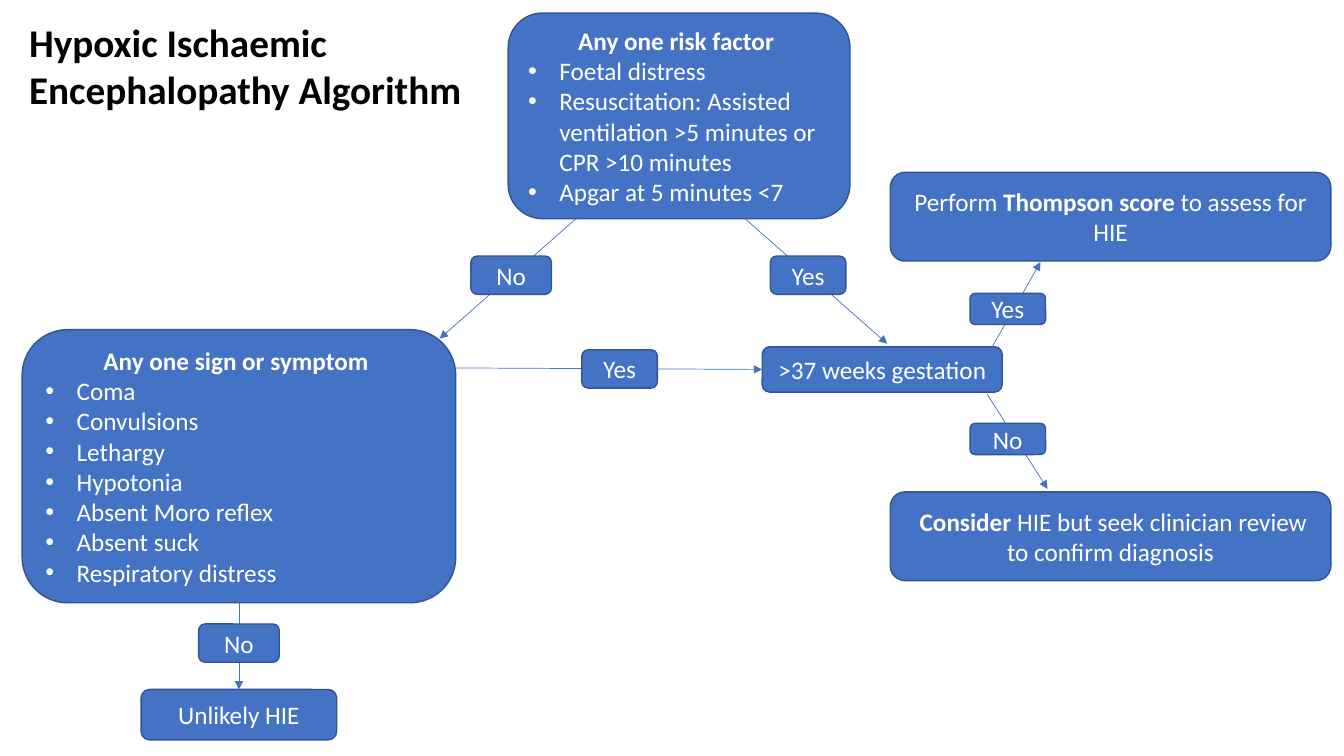
from dataclasses import dataclass

from lxml.etree import SubElement
from pptx import Presentation
from pptx.dml.color import RGBColor
from pptx.enum.shapes import MSO_CONNECTOR, MSO_SHAPE
from pptx.enum.text import MSO_ANCHOR, PP_ALIGN
from pptx.oxml.ns import qn
from pptx.util import Inches, Pt


@dataclass(frozen=True)
class Theme:
    fill: RGBColor = RGBColor(0x44, 0x72, 0xC4)
    outline: RGBColor = RGBColor(0x32, 0x54, 0x91)
    light: RGBColor = RGBColor(0xFF, 0xFF, 0xFF)
    dark: RGBColor = RGBColor(0, 0, 0)
    font: str = "Calibri"
    bullet_font: str = "Arial"
    title: int = 28
    body: int = 18
    outline_width: float = 1
    arrow_width: float = 0.5
    indent: float = 0.31


THEME = Theme()

TITLE = "Hypoxic Ischaemic Encephalopathy Algorithm"
TITLE_AT = (0.19, 0.13, 5.51, 1.04)

# Boxes: name -> (left, top, width, height), heading runs (text, bold), bullets
BOXES = {
    "risk": ((5.04, 0.13, 3.39, 2.04), [("Any one risk factor ", True)],
             ["Foetal distress",
              "Resuscitation: Assisted ventilation >5 minutes or CPR >10 minutes",
              "Apgar at 5 minutes <7"]),
    "signs": ((0.22, 3.27, 4.3, 2.71), [("Any one sign or symptom ", True)],
              ["Coma", "Convulsions", "Lethargy", "Hypotonia",
               "Absent Moro reflex", "Absent suck", "Respiratory distress"]),
    "thompson": ((8.83, 1.71, 4.37, 0.88),
                 [("Perform ", False), ("Thompson score ", True),
                  ("to assess for HIE", False)], []),
    "gestation": ((7.56, 3.44, 2.38, 0.45), [(">37 weeks gestation", False)], []),
    "consider": ((8.83, 4.88, 4.37, 0.88),
                 [(" Consider ", True),
                  ("HIE but seek clinician review to confirm diagnosis", False)], []),
    "unlikely": ((1.4, 6.84, 1.94, 0.5), [("Unlikely HIE", False)], []),
}

# Arrows: start, end, joined start (box, side), joined end (box, side)
ARROWS = [
    ((5.77, 2.12), (4.36, 3.36), None, None),
    ((7.39, 2.17), (8.8, 3.41), None, None),
    ((2.37, 5.98), (2.37, 6.84), ("signs", 2), ("unlikely", 0)),
    ((4.49, 3.65), (7.56, 3.67), None, ("gestation", 1)),
    ((9.79, 3.53), (10.32, 2.6), None, None),
    ((9.79, 3.91), (10.39, 4.85), None, None),
]

# Answers lying on the arrows
ANSWERS = [
    ("No", (4.67, 2.54, 0.8, 0.38)),
    ("Yes", (7.64, 2.54, 0.75, 0.38)),
    ("Yes", (5.77, 3.47, 0.75, 0.38)),
    ("Yes", (9.62, 2.91, 0.75, 0.31)),
    ("No", (9.62, 4.2, 0.75, 0.31)),
    ("No", (1.97, 6.19, 0.8, 0.38)),
]


def add_run(p, text, size, color, bold=False):
    r = p.add_run()
    r.text = text
    r.font.name = THEME.font
    r.font.size = Pt(size)
    r.font.bold = bold
    r.font.color.rgb = color


def set_bullet(p):
    pPr = p._p.get_or_add_pPr()
    pPr.set("marL", str(Inches(THEME.indent)))
    pPr.set("indent", str(-Inches(THEME.indent)))
    SubElement(pPr, qn("a:buFont"), typeface=THEME.bullet_font)
    SubElement(pPr, qn("a:buChar"), char="•")


def add_box(slide, at, heading, bullets=()):
    s = slide.shapes.add_shape(MSO_SHAPE.ROUNDED_RECTANGLE, *map(Inches, at))
    s.shadow.inherit = False
    s.fill.solid()
    s.fill.fore_color.rgb = THEME.fill
    s.line.color.rgb = THEME.outline
    s.line.width = Pt(THEME.outline_width)
    tf = s.text_frame
    tf.word_wrap = True
    tf.vertical_anchor = MSO_ANCHOR.MIDDLE
    p = tf.paragraphs[0]
    p.alignment = PP_ALIGN.CENTER
    for text, bold in heading:
        add_run(p, text, THEME.body, THEME.light, bold)
    for text in bullets:
        p = tf.add_paragraph()
        p.alignment = PP_ALIGN.LEFT
        set_bullet(p)
        add_run(p, text, THEME.body, THEME.light)
    return s


def add_arrow(slide, boxes, start, end, begin_at, end_at):
    c = slide.shapes.add_connector(MSO_CONNECTOR.STRAIGHT, *map(Inches, start + end))
    if begin_at:
        c.begin_connect(boxes[begin_at[0]], begin_at[1])
    if end_at:
        c.end_connect(boxes[end_at[0]], end_at[1])
    c.line.color.rgb = THEME.fill
    c.line.width = Pt(THEME.arrow_width)
    SubElement(c.line._get_or_add_ln(), qn("a:tailEnd"), type="triangle")
    SubElement(c._element.spPr, qn("a:effectLst"))


def add_title(slide):
    tf = slide.shapes.add_textbox(*map(Inches, TITLE_AT)).text_frame
    tf.word_wrap = True
    add_run(tf.paragraphs[0], TITLE, THEME.title, THEME.dark, True)


def main():
    prs = Presentation()
    prs.slide_width, prs.slide_height = Inches(13.33), Inches(7.5)
    slide = prs.slides.add_slide(prs.slide_layouts[6])

    add_title(slide)
    boxes = {name: add_box(slide, *box) for name, box in BOXES.items()}
    for arrow in ARROWS:
        add_arrow(slide, boxes, *arrow)
    # Answers go last so that they cover the arrows
    for text, at in ANSWERS:
        add_box(slide, at, [(text, False)])

    prs.save("out.pptx")


if __name__ == "__main__":
    main()
